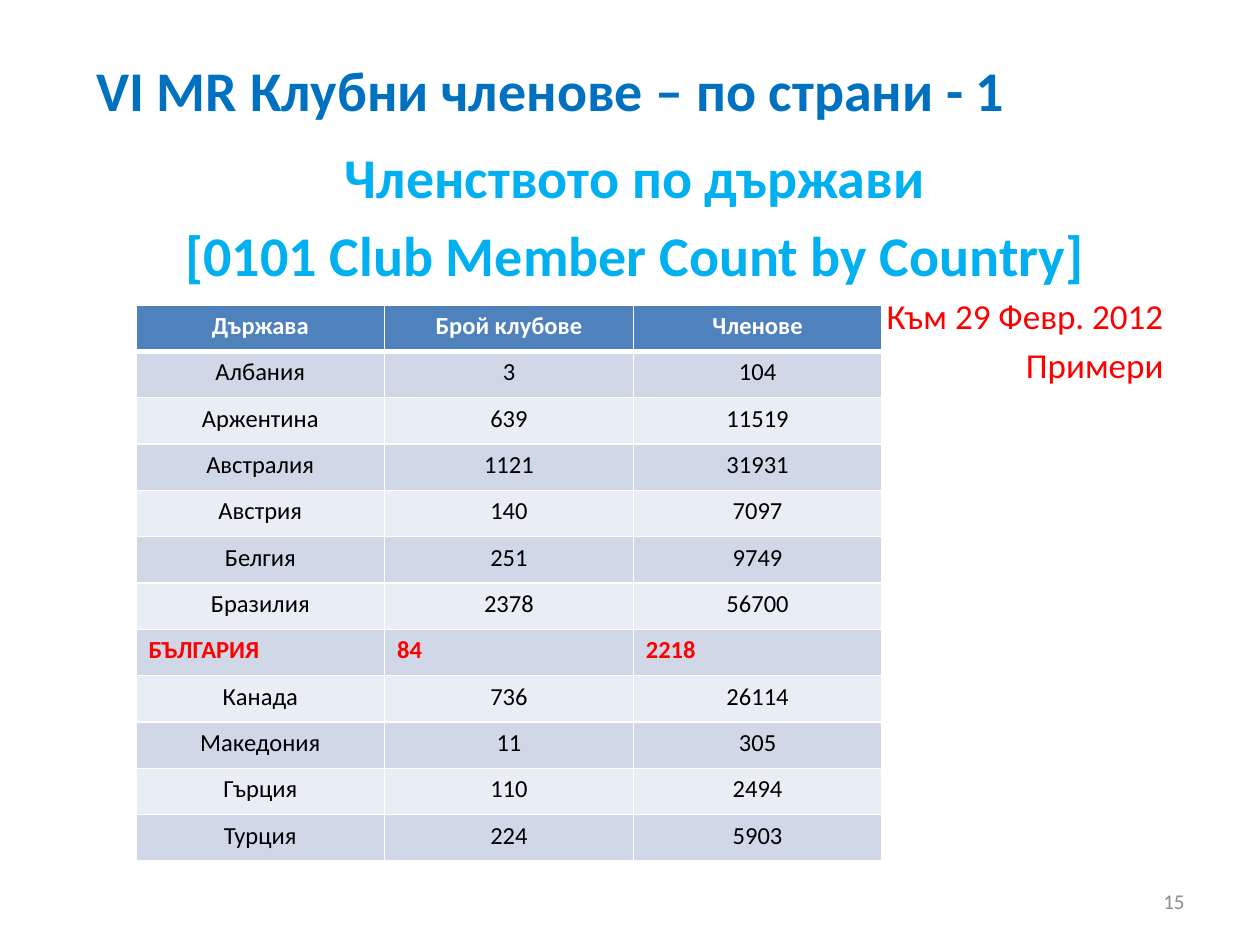
from lxml.etree import SubElement
from pptx import Presentation
from pptx.dml.color import RGBColor
from pptx.enum.text import MSO_ANCHOR as Anchor, PP_ALIGN as Align
from pptx.oxml.ns import qn
from pptx.util import Emu, Pt

PX = 914400 / 126
FONT = "Calibri"

WHITE = RGBColor(0xFF, 0xFF, 0xFF)
BLACK = RGBColor(0, 0, 0)
RED = RGBColor(0xFF, 0, 0)
GRAY = RGBColor(0x8C, 0x8C, 0x8C)
TITLE_BLUE = RGBColor(0x00, 0x70, 0xC0)
SKY_BLUE = RGBColor(0x00, 0xB0, 0xF0)
HEADER_BLUE = RGBColor(0x4F, 0x81, 0xBD)
BANDS = (RGBColor(0xE9, 0xED, 0xF4), RGBColor(0xD0, 0xD8, 0xE8))

HIGHLIGHTED = "БЪЛГАРИЯ"
MEMBERSHIP = [
    ("Държава", "Брой клубове", "Членове"),
    ("Албания", 3, 104),
    ("Аржентина", 639, 11519),
    ("Австралия", 1121, 31931),
    ("Австрия", 140, 7097),
    ("Белгия", 251, 9749),
    ("Бразилия", 2378, 56700),
    (HIGHLIGHTED, 84, 2218),
    ("Канада", 736, 26114),
    ("Македония", 11, 305),
    ("Гърция", 110, 2494),
    ("Турция", 224, 5903),
]


def px(*lengths):
    return [Emu(round(length * PX)) for length in lengths]


def format_paragraph(paragraph, size, color, bold=False, align=Align.LEFT):
    paragraph.alignment = align
    for run in paragraph.runs:
        font = run.font
        font.name, font.size, font.bold = FONT, Pt(size), bold
        font.color.rgb = color


def add_text(slide, box, lines, anchor=Anchor.MIDDLE, spacing=0):
    """Add a text box; each line is (text, size, color, bold, align).

    Spacing is the space before a paragraph as a share of its text size.
    """
    text_frame = slide.shapes.add_textbox(*px(*box)).text_frame
    text_frame.word_wrap = True
    text_frame.vertical_anchor = anchor
    text_frame.text = "\n".join(line[0] for line in lines)
    for paragraph, (_, size, *style) in zip(text_frame.paragraphs, lines):
        paragraph.space_before = Pt(size * spacing)
        format_paragraph(paragraph, size, *style)


def set_borders(cell, bottom_width):
    properties = cell._tc.get_or_add_tcPr()
    for side, width in (("L", 1), ("R", 1), ("T", 1), ("B", bottom_width)):
        line = SubElement(properties, qn(f"a:ln{side}"), w=str(Pt(width)))
        fill = SubElement(line, qn("a:solidFill"))
        SubElement(fill, qn("a:srgbClr"), val=str(WHITE))


def row_style(index, country):
    """Return fill, text color, bold and alignment of a table row."""
    if index == 0:
        return HEADER_BLUE, WHITE, True, Align.CENTER
    if country == HIGHLIGHTED:
        return BANDS[index % 2], RED, True, Align.LEFT
    return BANDS[index % 2], BLACK, False, Align.CENTER


def add_membership_table(slide, box):
    table = slide.shapes.add_table(
        len(MEMBERSHIP), len(MEMBERSHIP[0]), *px(*box)).table
    for index, values in enumerate(MEMBERSHIP):
        fill, *text_style = row_style(index, values[0])
        for cell, value in zip(table.rows[index].cells, values):
            set_borders(cell, bottom_width=3 if index == 0 else 1)
            cell.fill.solid()
            cell.fill.fore_color.rgb = fill
            cell.text = str(value)
            format_paragraph(cell.text_frame.paragraphs[0], 14, *text_style)


def main():
    presentation = Presentation()
    presentation.slide_width, presentation.slide_height = px(1260, 945)
    slide = presentation.slides.add_slide(presentation.slide_layouts[6])

    add_text(slide, (84, 42, 1124, 94), [
        ("VI MR Клубни членове – по страни - 1", 32, TITLE_BLUE, True),
    ])
    heading = (32, SKY_BLUE, True, Align.CENTER)
    remark = (20, RED, False, Align.RIGHT)
    add_text(slide, (94, 136, 1082, 735), [
        ("Членството по държави", *heading),
        ("[0101 Club Member Count by Country]", *heading),
        ("Към 29 Февр. 2012", *remark),
        ("Примери", *remark),
    ], anchor=Anchor.TOP, spacing=0.2)
    add_text(slide, (903, 876, 294, 50), [
        ("15", 12, GRAY, False, Align.RIGHT),
    ])
    add_membership_table(slide, (136, 305, 746, 556))

    presentation.save("out.pptx")


if __name__ == "__main__":
    main()
